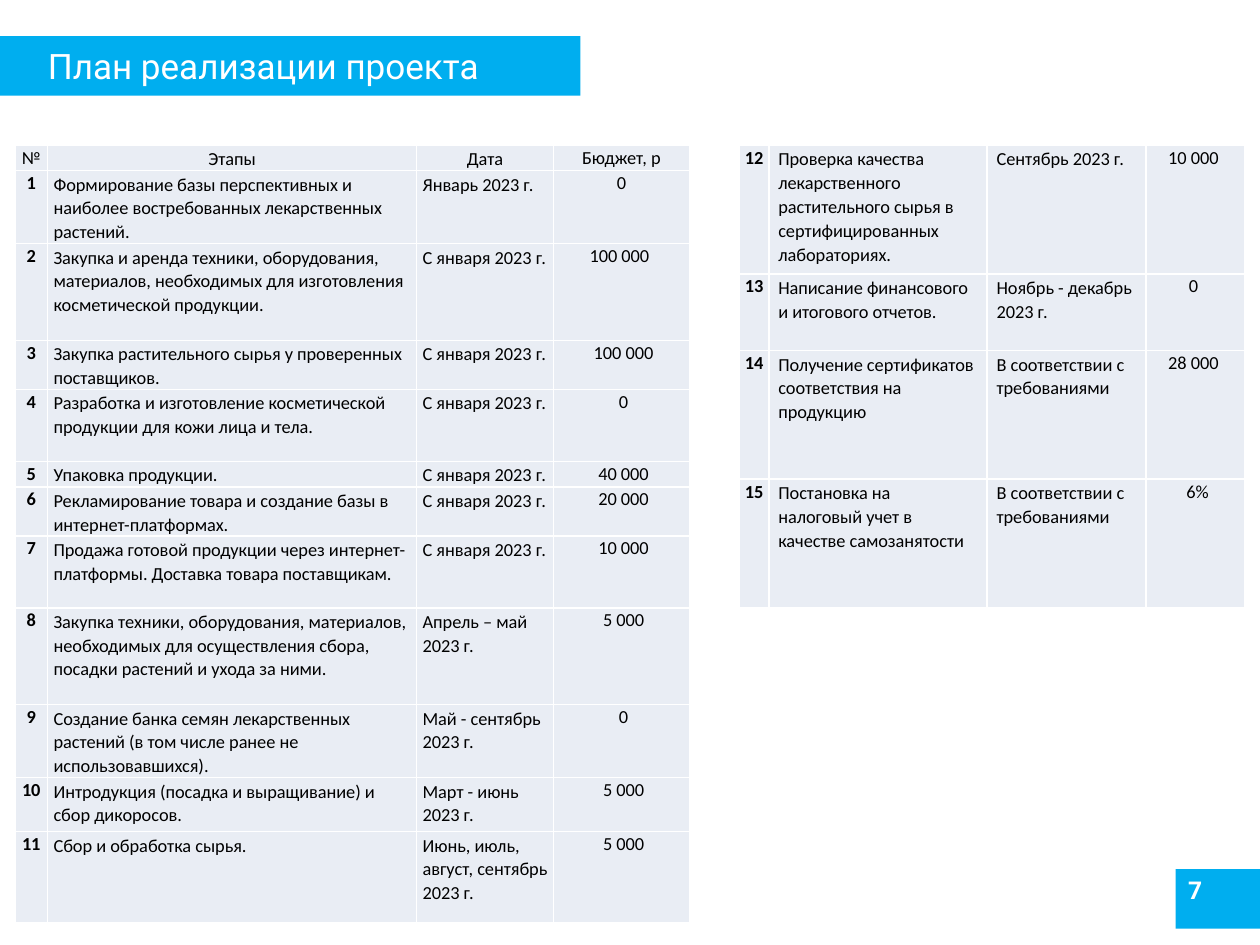
"""Build the project plan slide with its two stage tables."""
from lxml.etree import SubElement as Sub
from pptx import Presentation as Deck
from pptx.dml.color import RGBColor as Rgb
from pptx.enum.shapes import MSO_SHAPE as Kind
from pptx.enum.text import MSO_ANCHOR as Anchor, MSO_AUTO_SIZE as Auto, PP_ALIGN as Align
from pptx.oxml.ns import qn
from pptx.util import Cm, Pt

BLUE, PALE, WHITE, BLACK = "00AEEF", "E9EDF4", "FFFFFF", "000000"
HEAD = ("№", "Этапы", "Дата", "Бюджет, р")
SINCE = "С января 2023 г."
RULES = "В соответствии с требованиями"
LEFT = [
    ("1", "Формирование базы перспективных и наиболее востребованных лекарственных растений.", "Январь 2023 г.", "0"),
    ("2", "Закупка и аренда техники, оборудования, материалов, необходимых для изготовления косметической продукции.", SINCE, "100 000 "),
    ("3", "Закупка растительного сырья у проверенных поставщиков.", SINCE, " 100 000"),
    ("4", "Разработка и изготовление косметической продукции для кожи лица и тела.", SINCE, " 0"),
    ("5", "Упаковка продукции.", SINCE, " 40 000"),
    ("6", "Рекламирование товара и создание базы в интернет-платформах.", SINCE, " 20 000"),
    ("7", "Продажа готовой продукции через интернет-платформы. Доставка товара поставщикам.", SINCE, " 10 000"),
    ("8", "Закупка техники, оборудования, материалов, необходимых для осуществления сбора, посадки растений и ухода за ними.", "Апрель – май 2023 г.", " 5 000"),
    ("9", "Создание банка семян лекарственных растений (в том числе ранее не использовавшихся).", "Май - сентябрь 2023 г.", " 0"),
    ("10", "Интродукция (посадка и выращивание) и сбор дикоросов.", "Март - июнь 2023 г.", " 5 000"),
    ("11", "Сбор и обработка сырья.", "Июнь, июль, август, сентябрь 2023 г.", " 5 000"),
]
RIGHT = [
    ("12", "Проверка качества лекарственного растительного сырья в сертифицированных лабораториях.", "Сентябрь 2023 г.", "10 000 "),
    ("13", "Написание финансового и итогового отчетов.", "Ноябрь - декабрь 2023 г.", "0 "),
    ("14", "Получение сертификатов соответствия на продукцию", RULES, "28 000 "),
    ("15", "Постановка на налоговый учет в качестве самозанятости", RULES, " 6%"),
]


def tint(code):
    return Rgb.from_string(code)


def put(item, vals):
    for name, val in vals.items():
        setattr(item, name, val)


class Page:
    """Hold the style and the current slide."""

    body = {"name": "Calibri", "size": Pt(10.5)}
    top = {"name": "Roboto", "size": Pt(20), "bold": False}
    mark = {"name": "Roboto", "size": Pt(14), "bold": True}
    para = {"line_spacing": 1.07, "space_after": Pt(8)}

    def __init__(self, slide):
        self.slide = slide

    def place(self, shape, box):
        put(shape, dict(zip(("left", "top", "width", "height"), map(Cm, box))))

    def words(self, frame, text, font, code, align=Align.LEFT):
        frame.text = text
        line = frame.paragraphs[0]
        line.alignment = align
        put(line.runs[0].font, font)
        line.runs[0].font.color.rgb = tint(code)
        return line

    def bar(self, *box):
        shape = self.slide.shapes.add_shape(Kind.RECTANGLE, *map(Cm, box))
        shape.shadow.inherit = False
        shape.fill.solid()
        shape.fill.fore_color.rgb = tint(BLUE)
        shape.line.fill.background()

    def title(self, text, *box):
        shape = self.slide.shapes.title
        self.place(shape, box)
        self.words(shape.text_frame, text, self.top, WHITE)
        put(shape.text_frame, {"vertical_anchor": Anchor.MIDDLE, "auto_size": Auto.NONE, "word_wrap": True})
        shape.element.getparent().append(shape.element)

    def label(self, text, *box):
        frame = self.slide.shapes.add_textbox(*map(Cm, box)).text_frame
        frame.word_wrap = True
        self.words(frame, text, self.mark, WHITE)

    def edge(self, cell):
        props = cell._tc.get_or_add_tcPr()
        for side in "LRTB":
            line = Sub(props, qn(f"a:ln{side}"), w=str(Pt(1)))
            Sub(Sub(line, qn("a:solidFill")), qn("a:srgbClr"), val=WHITE)

    def cell(self, cell, text, col, head, pad):
        ends = col in (0, 3)
        side, rise = (0, 0) if ends else (Cm(pad), Cm(0.03))
        put(cell, {"margin_left": side, "margin_right": side, "margin_top": rise, "margin_bottom": 0})
        self.edge(cell)
        cell.fill.solid()
        cell.fill.fore_color.rgb = tint(PALE)
        font = {**self.body, "bold": col == 0 and not head}
        align = Align.CENTER if head or ends else Align.LEFT
        put(self.words(cell.text_frame, text, font, BLACK, align), self.para)

    def table(self, rows, left, top, wide, high, pad):
        size = map(Cm, (left, top, sum(wide), sum(high)))
        table = self.slide.shapes.add_table(len(rows), len(wide), *size).table
        put(table, {"first_row": False, "horz_banding": False})
        for col, width in zip(table.columns, wide):
            col.width = Cm(width)
        for y, (row, height) in enumerate(zip(rows, high)):
            table.rows[y].height = Cm(height)
            for x, text in enumerate(row):
                self.cell(table.cell(y, x), text, x, row is HEAD, pad)


def main():
    deck = Deck()
    put(deck, {"slide_width": Cm(25.4), "slide_height": Cm(19.05)})
    page = Page(deck.slides.add_slide(deck.slide_layouts[5]))
    page.bar(0, 0.73, 11.7, 1.2)
    page.bar(23.7, 17.52, 1.7, 1.2)
    page.title("План реализации проекта", 0.71, 0.73, 10.8, 1.2)
    page.table([HEAD, *LEFT], 0.3, 2.93, (0.66, 7.44, 2.76, 2.74),
               (0.5, 1.45, 1.95, 0.9, 1.45, 0.5, 0.97, 1.45, 1.95, 1.45, 1.09, 1.84), 0.12)
    page.label("7", 23.7, 17.52, 1.6, 1.2)
    page.table(RIGHT, 14.9, 2.93, (0.6, 4.4, 3.2, 2), (2.59, 1.55, 2.59, 2.59), 0.19)
    deck.save("out.pptx")


if __name__ == "__main__":
    main()
